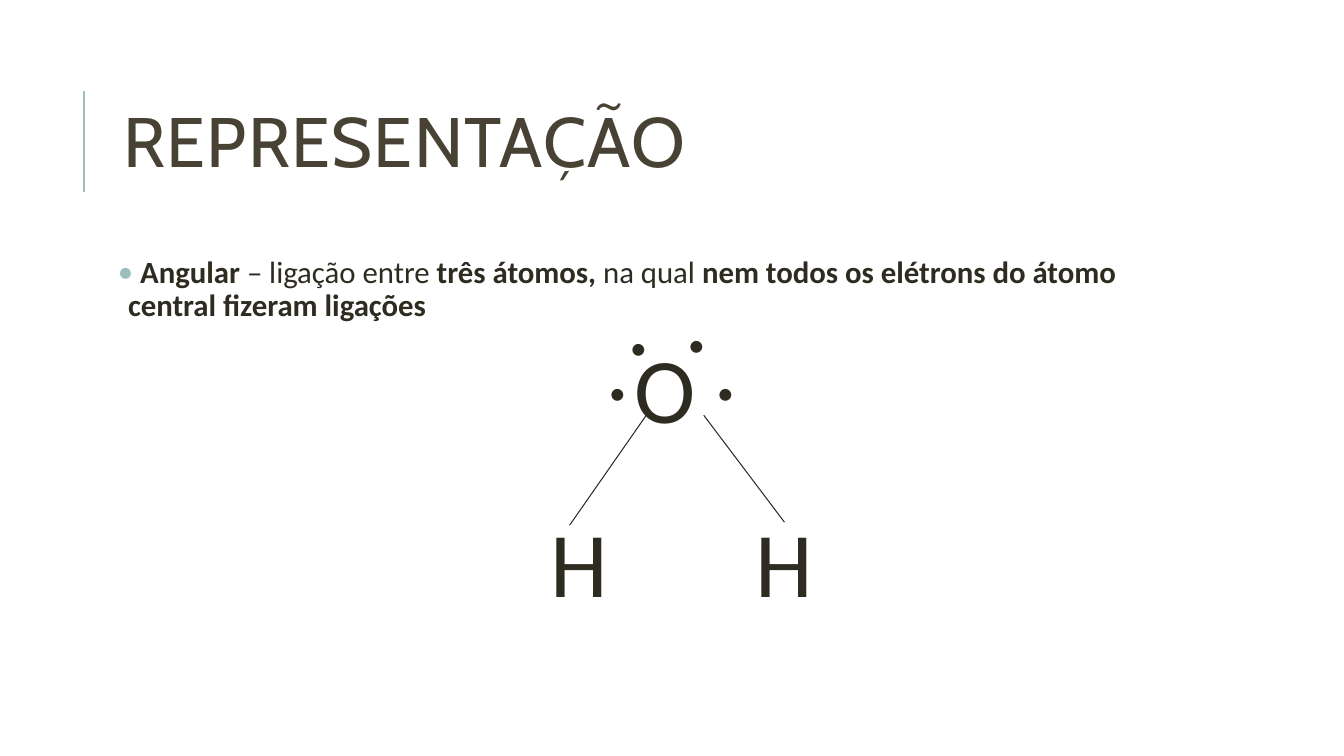
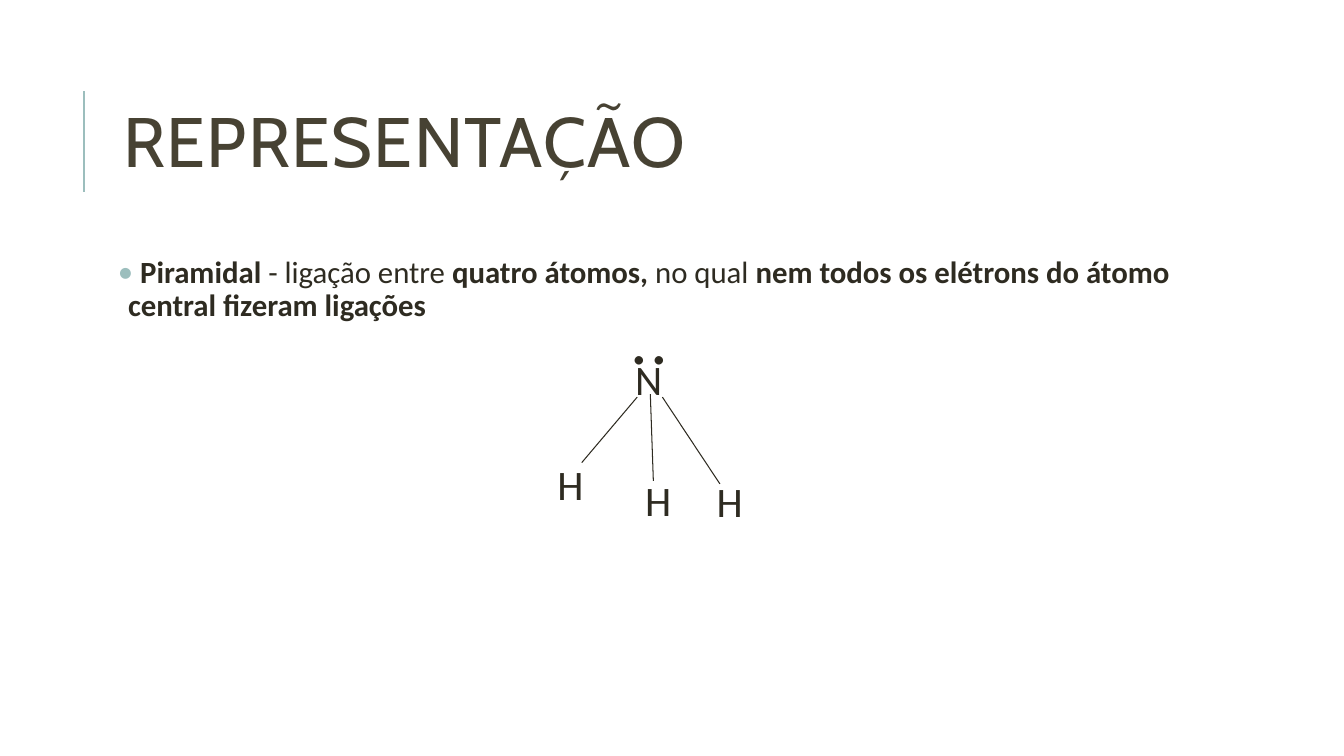
from dataclasses import dataclass

from lxml import etree
from pptx import Presentation
from pptx.dml.color import RGBColor
from pptx.enum import shapes, text
from pptx.oxml import ns
from pptx.util import Inches, Pt


@dataclass(frozen=True)
class Theme:
    ink: str = "2E2B21"
    head: str = "474233"
    accent: str = "9CBEBD"
    head_font: str = "Cabin"
    body_font: str = "Calibri"
    head_size: int = 50
    body_size: int = 22
    rule: float = 1.5
    bond: float = 0.75


class Deck:
    def __init__(self, theme):
        self.theme = theme
        self.prs = Presentation()
        self.prs.slide_width = Inches(13.33)
        self.prs.slide_height = Inches(7.5)
        self.slide = None

    def font(self, para, name, size, color):
        para.font.name = name
        para.font.size = Pt(size)
        para.font.color.rgb = RGBColor.from_string(color)

    def line(self, start, end, color, width):
        line = self.slide.shapes.add_connector(
            shapes.MSO_CONNECTOR.STRAIGHT,
            *(Inches(v) for v in (*start, *end)))
        line.line.color.rgb = RGBColor.from_string(color)
        line.line.width = Pt(width)
        etree.SubElement(line._element.spPr, ns.qn("a:effectLst"))

    def box(self, left, top, width, height):
        box = self.slide.shapes.add_textbox(
            *(Inches(v) for v in (left, top, width, height)))
        box.text_frame.word_wrap = True
        return box.text_frame

    def page(self, title):
        """Start a slide with its accent rule and title."""
        t = self.theme
        self.slide = self.prs.slides.add_slide(self.prs.slide_layouts[5])
        self.line((0.83, 1.9), (0.83, 0.9), t.accent, t.rule)
        head = self.slide.shapes.title
        head.left, head.top = Inches(1.12), Inches(0.64)
        head.width, head.height = Inches(10.63), Inches(1.64)
        frame = head.text_frame
        frame.text = title
        frame.auto_size = text.MSO_AUTO_SIZE.NONE
        frame.vertical_anchor = text.MSO_ANCHOR.MIDDLE
        para = frame.paragraphs[0]
        para.alignment = text.PP_ALIGN.LEFT
        para.line_spacing = 0.8
        self.font(para, t.head_font, t.head_size, t.head)
        para.runs[0].font._element.set("spc", "100")

    def bullet(self, parts):
        """Write one bullet whose parts alternate bold and regular."""
        t = self.theme
        frame = self.box(1.12, 2.5, 10.63, 4.4)
        frame.margin_left = frame.margin_right = Inches(0.05)
        para = frame.paragraphs[0]
        para.line_spacing = 0.9
        para.space_before, para.space_after = Pt(12), Pt(2)
        self.font(para, t.body_font, t.body_size, t.ink)
        for i, part in enumerate(parts):
            run = para.add_run()
            run.text = part
            run.font.bold = i % 2 == 0
        # Bullet mark and hanging indent
        props = para._p.get_or_add_pPr()
        props.set("marL", str(Inches(0.1)))
        props.set("indent", str(-Inches(0.1)))
        tint = etree.Element(ns.qn("a:buClr"))
        etree.SubElement(tint, ns.qn("a:srgbClr"), val=t.accent)
        face = etree.Element(ns.qn("a:buFont"), typeface=t.body_font)
        char = etree.Element(ns.qn("a:buChar"), char="•")
        for mark in (tint, face, char):
            props.insert_element_before(mark, "a:defRPr")

    def glyphs(self, char, size, spots):
        """Set a letter or dot at each spot."""
        for left, top in spots:
            frame = self.box(left, top, size / 72, size * 1.22 / 72 + 0.1)
            para = frame.paragraphs[0]
            para.text = char
            self.font(para, self.theme.body_font, size, self.theme.ink)

    def bonds(self, pairs):
        for start, end in pairs:
            self.line(start, end, self.theme.ink, self.theme.bond)


def main():
    deck = Deck(Theme())
    title = "REPRESENTAÇÃO"
    close = "nem todos os elétrons do átomo central fizeram ligações"

    # Angular
    deck.page(title)
    deck.bullet([" Angular ", "– ligação entre ", "três átomos,",
                 " na qual ", close])
    deck.glyphs(".", 70, [(5.91, 2.95), (6.12, 2.51),
                          (6.69, 2.48), (6.98, 2.95)])
    deck.glyphs("H", 66, [(5.36, 4.96), (7.4, 4.96)])
    deck.glyphs("O", 66, [(6.19, 3.24)])
    deck.bonds([((5.65, 5.21), (6.41, 4.12)),
                ((7.78, 5.18), (6.98, 4.12))])

    # Piramidal
    deck.page(title)
    deck.bullet([" Piramidal ", "- ligação entre ", "quatro átomos, ",
                 "no qual ", close])
    deck.bonds([((7.14, 4.8), (6.57, 3.94)),
                ((5.77, 4.59), (6.32, 3.94)),
                ((6.48, 4.77), (6.45, 3.91))])
    deck.glyphs("N", 30, [(6.2, 3.46)])
    deck.glyphs("H", 30, [(7.01, 4.67), (6.3, 4.66), (5.43, 4.5)])
    deck.glyphs(".", 50, [(6.35, 2.87), (6.16, 2.87)])

    deck.prs.save("out.pptx")


if __name__ == "__main__":
    main()
